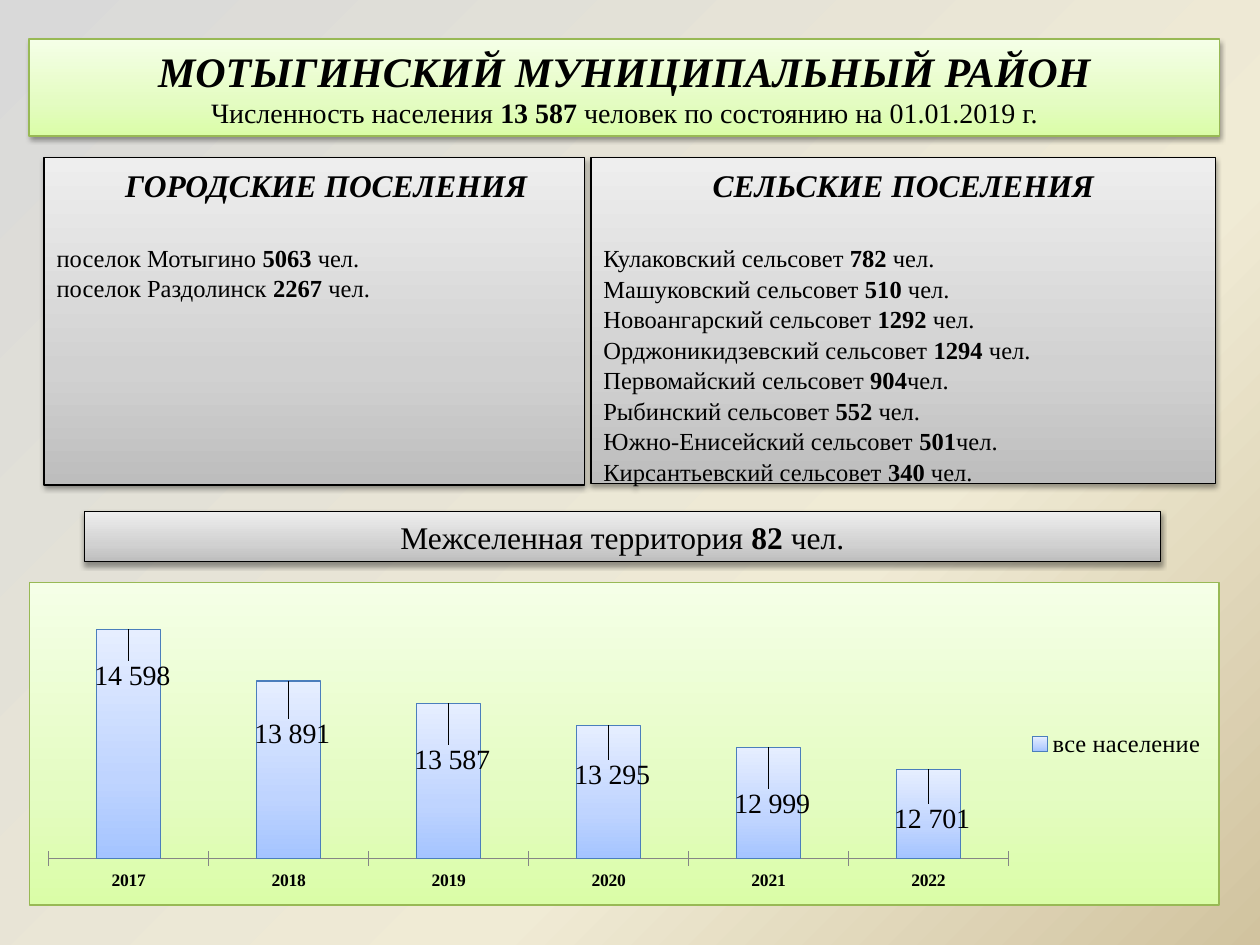
"""Build a one-slide population overview of the Motygino district."""
from dataclasses import dataclass, field
from typing import Any

from pptx import Presentation
from pptx import oxml as ox
from pptx import util as u
from pptx.chart.data import CategoryChartData
from pptx.dml.color import RGBColor
from pptx.enum import chart as ch
from pptx.enum import shapes, text
from pptx.oxml import ns


@dataclass(frozen=True)
class Ramp:
    low: str
    mid: str
    high: str
    turn: int = 270
    stop: int = 35


@dataclass(frozen=True)
class Theme:
    back: Ramp = Ramp("D9D9D9", "F0EBD5", "D1C39F", 45, 65)
    green: Ramp = Ramp("DAFDA7", "E4FCC2", "F5FFE7")
    gray: Ramp = Ramp("BDBDBD", "D1D1D1", "EEEEEE")
    blue: Ramp = Ramp("A4C4FF", "BFD4FF", "E6EEFF")
    ink: str = "000000"
    leaf: str = "98B955"
    edge: str = "4B7EBC"
    rule: str = "868686"
    face: str = "Times New Roman"
    title: float = 24
    head: float = 18
    sub: float = 16
    body: float = 14
    tick: float = 10
    thin: float = 0.75


@dataclass(frozen=True)
class Line:
    words: str
    size: float
    slant: bool = False
    mid: bool = True
    gap: float = 0
    lead: float = 1
    dent: float = 0


@dataclass(frozen=True)
class Panel:
    left: float
    top: float
    width: float
    height: float
    ramp: Ramp
    edge: str
    lines: list[Line] = field(default_factory=list)
    high: bool = False


T = Theme()


def color(code: str) -> RGBColor:
    """Return the colour for a hex code."""
    return RGBColor.from_string(code)


def blend(ramp: Ramp) -> Any:
    """Return a three-stop gradient element."""
    pairs = ((0, ramp.low), (ramp.stop, ramp.mid), (100, ramp.high))
    stops = "".join(f'<a:gs pos="{at * 1000}"><a:srgbClr val="{code}"/></a:gs>'
                    for at, code in pairs)
    return ox.parse_xml(f'<a:gradFill {ns.nsdecls("a")} rotWithShape="1"><a:gsLst>{stops}'
                        f'</a:gsLst><a:lin ang="{ramp.turn * 60000}" scaled="0"/></a:gradFill>')


def paint(fill: Any, root: Any, ramp: Ramp) -> None:
    """Fill the part under root with a ramp."""
    fill.gradient()
    old = root.find(".//" + ns.qn("a:gradFill"))
    old.getparent().replace(old, blend(ramp))


def shade(shape: Any) -> None:
    """Give a shape its soft drop shadow."""
    shape.shadow.inherit = False
    shape.element.spPr.find(ns.qn("a:effectLst")).append(ox.parse_xml(
        f'<a:outerShdw {ns.nsdecls("a")} blurRad="{u.Pt(3.1)}" dist="{u.Pt(1.6)}" '
        f'dir="5400000" rotWithShape="0"><a:srgbClr val="{T.ink}">'
        '<a:alpha val="38000"/></a:srgbClr></a:outerShdw>'))


def style(font: Any, size: float) -> None:
    """Set the face, size and colour of a font."""
    font.name, font.size = T.face, u.Pt(size)
    font.color.rgb = color(T.ink)


def write(para: Any, line: Line) -> None:
    """Write a line whose parts between bars are bold."""
    para.alignment = text.PP_ALIGN.CENTER if line.mid else text.PP_ALIGN.LEFT
    para.space_before, para.line_spacing = u.Pt(line.gap), line.lead
    style(para.font, line.size)
    para.font.italic = line.slant
    if line.dent:
        para._p.get_or_add_pPr().set("marL", str(u.Pt(line.dent)))
    for spot, part in enumerate(line.words.split("|")):
        if part:
            run = para.add_run()
            run.text, run.font.bold = part, spot % 2 == 1


def draw(slide: Any, panel: Panel) -> None:
    """Draw a panel with its lines of text."""
    spots = map(u.Pt, (panel.left, panel.top, panel.width, panel.height))
    box = slide.shapes.add_shape(shapes.MSO_SHAPE.RECTANGLE, *spots)
    paint(box.fill, box.element, panel.ramp)
    box.line.color.rgb, box.line.width = color(panel.edge), u.Pt(T.thin)
    shade(box)
    frame = box.text_frame
    frame.word_wrap = True
    frame.vertical_anchor = text.MSO_ANCHOR.TOP if panel.high else text.MSO_ANCHOR.MIDDLE
    if panel.high:
        frame.margin_top = u.Pt(5)
    for spot, line in enumerate(panel.lines):
        write(frame.add_paragraph() if spot else frame.paragraphs[0], line)


def listing(head: str, rows: list[str], dent: float = 0) -> list[Line]:
    """Return a heading and the rows below it."""
    return [Line(f"|{head}|", T.head, slant=True, dent=dent)] + [
        Line(row, T.body, mid=False, gap=0 if spot else 21.6, lead=1.04)
        for spot, row in enumerate(rows)]


def place(**parts: Any) -> Any:
    """Return a manual chart layout."""
    inner = "".join(f'<c:{key} val="{val}"/>' for key, val in parts.items())
    return ox.parse_xml(f'<c:layout {ns.nsdecls("c")}><c:manualLayout>{inner}'
                        '</c:manualLayout></c:layout>')


def graph(slide: Any, tags: list[tuple[str, int, str, float]]) -> None:
    """Draw the column chart of the population by year."""
    data = CategoryChartData()
    data.categories = [tag[0] for tag in tags]
    data.add_series("все население", [tag[1] for tag in tags])
    spots = map(u.Pt, (16.6, 332.6, 680.4, 185))
    chart = slide.shapes.add_chart(ch.XL_CHART_TYPE.COLUMN_CLUSTERED, *spots, data).chart
    style(chart.font, T.tick)
    chart.has_title, chart.has_legend = False, True
    chart.legend.position = ch.XL_LEGEND_POSITION.RIGHT
    chart.legend.include_in_layout = False
    style(chart.legend.font, T.body)
    root = chart.element.find(ns.qn("c:chart"))
    skin = ox.parse_xml(f'<c:spPr {ns.nsdecls("c", "a")}><a:ln w="{u.Pt(T.thin)}"><a:solidFill>'
                        f'<a:srgbClr val="{T.leaf}"/></a:solidFill></a:ln></c:spPr>')
    skin.insert(0, blend(T.green))
    root.addnext(skin)
    area = root.find(ns.qn("c:plotArea"))
    for old in area.findall(ns.qn("c:layout")):
        area.remove(old)
    area.insert(0, place(layoutTarget="inner", xMode="edge", yMode="edge",
                         x=0.016, y=0.05, w=0.807, h=0.806))
    base, scale = chart.category_axis, chart.value_axis
    base.major_tick_mark = ch.XL_TICK_MARK.CROSS
    base.format.line.color.rgb = color(T.rule)
    style(base.tick_labels.font, T.tick)
    base.tick_labels.font.bold = True
    scale.minimum_scale, scale.maximum_scale = 11500, 15000
    scale.has_major_gridlines = scale.visible = False
    plot = chart.plots[0]
    plot.gap_width, plot.vary_by_categories = 150, False
    bars = plot.series[0]
    paint(bars.format.fill, bars._element, T.blue)
    bars.format.line.color.rgb, bars.format.line.width = color(T.edge), u.Pt(T.thin)
    bars.data_labels.show_value = True
    style(bars.data_labels.font, T.sub)
    for spot, (_, _, words, drop) in enumerate(tags):
        label = bars.points[spot].data_label
        run = label.text_frame.paragraphs[0].add_run()
        run.text, run.font.bold = words, False
        style(run.font, T.sub)
        label.position = ch.XL_LABEL_POSITION.OUTSIDE_END
    for node, tag in zip(bars._element.iter(ns.qn("c:dLbl")), tags):
        node.insert(1, place(x=0.003, y=tag[3]))


def main() -> None:
    """Build and save the slide."""
    deck = Presentation()
    deck.slide_width, deck.slide_height = u.Pt(720), u.Pt(540)
    slide = deck.slides.add_slide(deck.slide_layouts[6])
    paint(slide.background.fill, slide.element, T.back)
    towns = ["поселок Мотыгино |5063| чел.", "поселок Раздолинск |2267| чел."]
    farms = ["Кулаковский сельсовет |782| чел.", "Машуковский сельсовет |510| чел.",
             "Новоангарский сельсовет |1292| чел.", "Орджоникидзевский сельсовет |1294| чел.",
             "Первомайский сельсовет |904|чел.", "Рыбинский сельсовет |552| чел.",
             "Южно-Енисейский сельсовет |501|чел.", "Кирсантьевский сельсовет |340| чел."]
    title = [Line("|МОТЫГИНСКИЙ МУНИЦИПАЛЬНЫЙ РАЙОН|", T.title, slant=True),
             Line("Численность населения |13 587 |человек по состоянию на 01.01.2019 г.", T.sub)]
    for panel in (
        Panel(16.6, 22.3, 680.4, 55.4, T.green, T.leaf, title),
        Panel(25.2, 90, 308.9, 187.2, T.gray, T.ink,
              listing("ГОРОДСКИЕ ПОСЕЛЕНИЯ", towns, 13.5), True),
        Panel(337.7, 90, 357.1, 186.5, T.gray, T.ink, listing("СЕЛЬСКИЕ ПОСЕЛЕНИЯ", farms), True),
        Panel(48.2, 292.3, 614.9, 28.8, T.gray, T.ink,
              [Line("Межселенная территория |82| чел.", T.head)]),
    ):
        draw(slide, panel)
    graph(slide, [("2017", 14589, "14 598", 0.21), ("2018", 13891, "13 891", 0.23),
                  ("2019", 13587, "13 587", 0.24), ("2020", 13295, "13 295", 0.22),
                  ("2021", 12999, "12 999", 0.24), ("2022", 12701, "12 701", 0.22)])
    deck.save("out.pptx")


if __name__ == "__main__":
    main()
